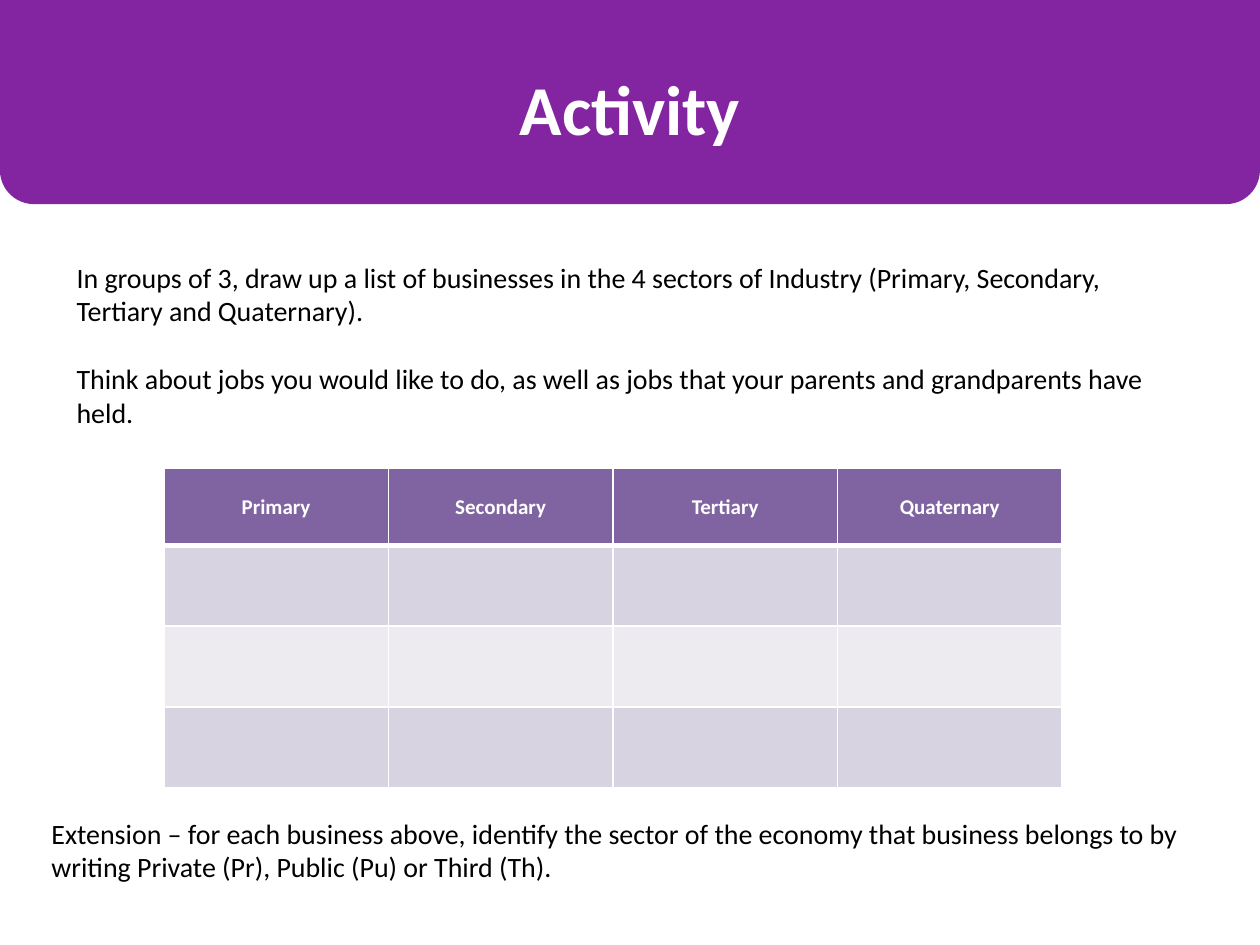
from lxml import etree
from pptx import Presentation
from pptx.dml.color import RGBColor
from pptx.enum.shapes import MSO_SHAPE
from pptx.enum.text import MSO_ANCHOR, MSO_AUTO_SIZE, PP_ALIGN
from pptx.oxml.ns import qn
from pptx.util import Inches, Pt

RECTANGLE = MSO_SHAPE.RECTANGLE
ROUNDED = MSO_SHAPE.ROUNDED_RECTANGLE
TOP = MSO_ANCHOR.TOP
MIDDLE = MSO_ANCHOR.MIDDLE
NO_RESIZE = MSO_AUTO_SIZE.NONE
LEFT = PP_ALIGN.LEFT
CENTER = PP_ALIGN.CENTER

PURPLE = RGBColor(0x83, 0x25, 0xA1)
HEADER_FILL = RGBColor(0x80, 0x64, 0xA2)
DARK_BAND = RGBColor(0xD8, 0xD3, 0xE0)
LIGHT_BAND = RGBColor(0xED, 0xEA, 0xF0)
WHITE = RGBColor(0xFF, 0xFF, 0xFF)
BLACK = RGBColor(0x00, 0x00, 0x00)

TITLE_FORMAT = {"name": "Calibri", "size": Pt(40), "bold": True}
BODY_FORMAT = {"name": "Calibri", "size": Pt(16), "bold": False}
HEADER_FORMAT = {"name": "Calibri", "size": Pt(12), "bold": True}


def write_paragraph(para, text, font_format, color, alignment):
    para.alignment = alignment
    span = para.add_run()
    span.text = text
    for name, value in font_format.items():
        setattr(span.font, name, value)
    span.font.color.rgb = color


def set_borders(cell, widths):
    properties = cell._tc.get_or_add_tcPr()
    for position, (side, width) in enumerate(widths.items()):
        line = etree.Element(qn(f"a:ln{side}"), w=str(Pt(width)))
        fill = etree.SubElement(line, qn("a:solidFill"))
        etree.SubElement(fill, qn("a:srgbClr"), val=str(WHITE))
        properties.insert(position, line)


deck = Presentation()
deck.slide_width = Inches(10)
deck.slide_height = Inches(7.5)
page = deck.slides.add_slide(deck.slide_layouts[6])

banner = page.shapes.add_group_shape()
for preset, height in [(RECTANGLE, 1.15), (ROUNDED, 1.62)]:
    panel = banner.shapes.add_shape(preset, 0, 0, Inches(10), Inches(height))
    panel.shadow.inherit = False
    panel.fill.solid()
    panel.fill.fore_color.rgb = PURPLE
    panel.line.fill.background()

headings = ["Primary", "Secondary", "Tertiary", "Quaternary"]
row_heights = [0.61, 0.64, 0.64, 0.64]
row_fills = [HEADER_FILL, DARK_BAND, LIGHT_BAND, DARK_BAND]
table = page.shapes.add_table(
    len(row_heights), len(headings), Inches(1.3), Inches(3.72), Inches(7.13), Inches(2.53)
).table
for row, height, fill in zip(table.rows, row_heights, row_fills):
    row.height = Inches(height)
    for cell in row.cells:
        cell.fill.solid()
        cell.fill.fore_color.rgb = fill
for column, heading in enumerate(headings):
    cell = table.cell(0, column)
    cell.vertical_anchor = MIDDLE
    cell.margin_left = cell.margin_right = Inches(0.07)
    cell.margin_top = cell.margin_bottom = 0
    write_paragraph(cell.text_frame.paragraphs[0], heading, HEADER_FORMAT, WHITE, CENTER)
    for row in range(len(row_heights)):
        top = 3 if row == 1 else 1
        bottom = 3 if row == 0 else 1
        set_borders(table.cell(row, column), {"L": 1, "R": 1, "T": top, "B": bottom})

text_boxes = [
    ((0, 0.47, 10, 0.77), TOP, 0.05, TITLE_FORMAT, WHITE, CENTER, ["Activity"]),
    ((0.51, 2.01, 8.9, 1.4), MIDDLE, 0, BODY_FORMAT, BLACK, LEFT, [
        "In groups of 3, draw up a list of businesses in the 4 sectors of Industry "
        "(Primary, Secondary, Tertiary and Quaternary).",
        "Think about jobs you would like to do, as well as jobs that your parents "
        "and grandparents have held.",
    ]),
    ((0.31, 6.43, 9.29, 0.64), TOP, 0.05, BODY_FORMAT, BLACK, LEFT, [
        "Extension – for each business above, identify the sector of the economy that "
        "business belongs to by writing Private (Pr), Public (Pu) or Third (Th).",
    ]),
]
for bounds, anchor, bottom_margin, font_format, color, alignment, texts in text_boxes:
    frame = page.shapes.add_textbox(*[Inches(length) for length in bounds]).text_frame
    frame.word_wrap = True
    frame.auto_size = NO_RESIZE
    frame.vertical_anchor = anchor
    frame.margin_bottom = Inches(bottom_margin)
    for index, text in enumerate(texts):
        para = frame.add_paragraph() if index else frame.paragraphs[0]
        if index:
            para.space_before = Pt(19.5)
        write_paragraph(para, text, font_format, color, alignment)

deck.save("out.pptx")
